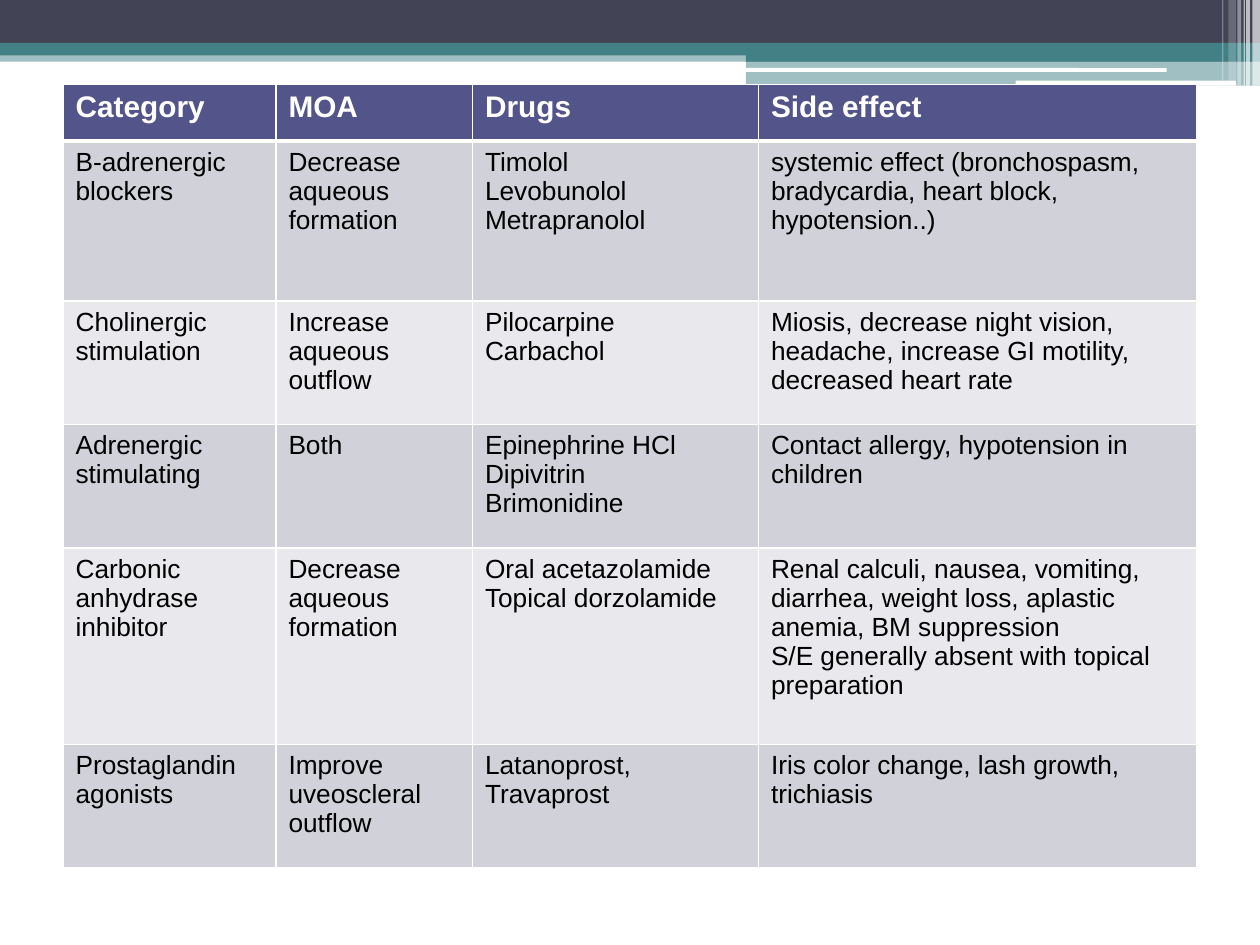
from lxml import etree
from pptx import Presentation
from pptx.dml.color import RGBColor
from pptx.enum import shapes
from pptx.oxml import ns
from pptx.util import Inches, Pt

WHITE = RGBColor(0xFF, 0xFF, 0xFF)
BLACK = RGBColor(0, 0, 0)
SLATE = RGBColor(0x42, 0x44, 0x56)
TEAL = RGBColor(0x43, 0x80, 0x86)
PURPLE = RGBColor(0x53, 0x54, 0x8A)
DARK_BAND = RGBColor(0xD1, 0xD1, 0xDA)
LIGHT_BAND = RGBColor(0xE9, 0xE9, 0xED)
RECT = shapes.MSO_SHAPE.RECTANGLE
ROUNDED = shapes.MSO_SHAPE.ROUNDED_RECTANGLE


def add_bar(page, kind, left, top, width, height, color, opacity=100):
    bar = page.shapes.add_shape(kind, Inches(left), Inches(top), Inches(width), Inches(height))
    bar.shadow.inherit = False
    bar.fill.solid()
    bar.fill.fore_color.rgb = color
    bar.line.fill.background()
    if opacity < 100:
        tint = bar.fill._xPr.find(".//" + ns.qn("a:srgbClr"))
        etree.SubElement(tint, ns.qn("a:alpha"), val=str(opacity * 1000))


def set_borders(cell, widths):
    properties = cell._tc.get_or_add_tcPr()
    for position, (side, points) in enumerate(widths.items()):
        line = etree.Element(ns.qn("a:ln" + side), w=str(Pt(points)))
        paint = etree.SubElement(line, ns.qn("a:solidFill"))
        etree.SubElement(paint, ns.qn("a:srgbClr"), val=str(WHITE))
        properties.insert(position, line)


deck = Presentation()
deck.slide_width, deck.slide_height = Inches(10), Inches(7.5)
page = deck.slides.add_slide(deck.slide_layouts[6])

bars = [
    (RECT, 0, 0.4, 10, 0.09, TEAL, 50),
    (RECT, 0, 0, 10, 0.34, SLATE, 100),
    (RECT, 0, 0.34, 10, 0.1, TEAL, 100),
    (RECT, 5.92, 0.39, 4.08, 0.1, TEAL, 100),
    (RECT, 5.92, 0.48, 4.08, 0.2, TEAL, 50),
    (ROUNDED, 5.91, 0.54, 3.35, 0.03, WHITE, 100),
    (ROUNDED, 8.06, 0.64, 1.75, 0.04, WHITE, 100),
]
for bar in bars:
    add_bar(page, *bar)

stripes = [
    (9.94, 0.06, 0.68, 65),
    (9.89, 0.03, 0.68, 65),
    (9.87, 0.01, 0.68, 60),
    (9.82, 0.03, 0.68, 40),
    (9.75, 0.06, 0.64, 20),
    (9.7, 0.01, 0.64, 30),
]
for left, width, height, opacity in stripes:
    add_bar(page, RECT, left, 0, width, height, WHITE, opacity)

treatments = [
    ("Category", "MOA", "Drugs", "Side effect"),
    ("Β-adrenergic blockers", "Decrease aqueous formation",
     "Timolol\nLevobunolol\nMetrapranolol",
     "systemic effect (bronchospasm, bradycardia, heart block, hypotension..)"),
    ("Cholinergic stimulation", "Increase aqueous outflow", "Pilocarpine\nCarbachol",
     "Miosis, decrease night vision, headache, increase GI motility, decreased heart rate"),
    ("Adrenergic stimulating", "Both", "Epinephrine HCl\nDipivitrin\nBrimonidine",
     "Contact allergy, hypotension in children"),
    ("Carbonic anhydrase inhibitor", "Decrease aqueous formation",
     "Oral acetazolamide\nTopical dorzolamide",
     "Renal calculi, nausea, vomiting, diarrhea, weight loss, aplastic anemia, BM suppression\n"
     "S/E generally absent with topical preparation"),
    ("Prostaglandin agonists", "Improve uveoscleral outflow", "Latanoprost,\nTravaprost",
     "Iris color change, lash growth, trichiasis"),
]
column_widths = [1.69, 1.56, 2.27, 3.48]
row_heights = [0.45, 1.27, 0.98, 0.98, 1.56, 0.98]

table = page.shapes.add_table(len(row_heights), len(column_widths), Inches(0.5), Inches(0.67),
                              Inches(9), Inches(sum(row_heights))).table
for column, width in zip(table.columns, column_widths):
    column.width = Inches(width)
for row, height in zip(table.rows, row_heights):
    row.height = Inches(height)

for row_index, entries in enumerate(treatments):
    header = row_index == 0
    band = PURPLE if header else DARK_BAND if row_index % 2 else LIGHT_BAND
    borders = {"L": 1, "R": 1, "T": 3 if row_index == 1 else 1, "B": 3 if header else 1}
    for column_index, entry in enumerate(entries):
        cell = table.cell(row_index, column_index)
        cell.fill.solid()
        cell.fill.fore_color.rgb = band
        set_borders(cell, borders)
        cell.text_frame.text = entry
        for para in cell.text_frame.paragraphs:
            for span in para.runs:
                span.font.name = "Arial"
                span.font.size = Pt(17 if header else 15)
                span.font.bold = header
                span.font.color.rgb = WHITE if header else BLACK

deck.save("out.pptx")
